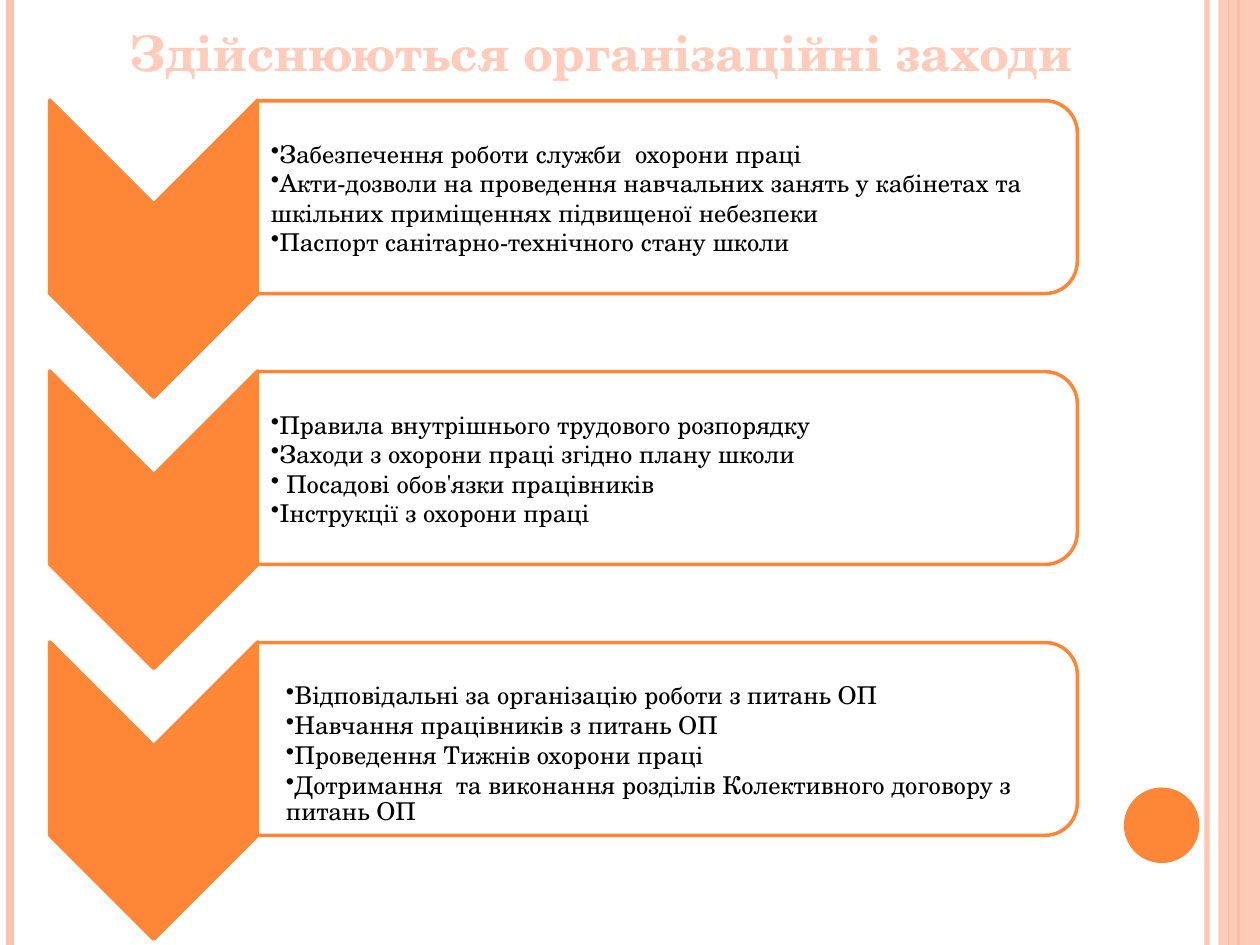
from lxml import etree
from pptx import Presentation
from pptx.dml.color import RGBColor
from pptx.enum.shapes import MSO_CONNECTOR, MSO_SHAPE
from pptx.enum.text import MSO_ANCHOR, PP_ALIGN
from pptx.oxml.ns import qn
from pptx.util import Inches, Pt

STRAIGHT = MSO_CONNECTOR.STRAIGHT
RECTANGLE, OVAL, CHEVRON = MSO_SHAPE.RECTANGLE, MSO_SHAPE.OVAL, MSO_SHAPE.CHEVRON
ROUND_TOP = MSO_SHAPE.ROUND_2_SAME_RECTANGLE
MIDDLE, CENTER = MSO_ANCHOR.MIDDLE, PP_ALIGN.CENTER
FONT = "TeX Gyre Schola"
COLORS = {"orange": "FE8637", "peach": "FEC3AE", "title": "FFCCBB",
          "panel": "FFFFFF", "text": "000000"}

prs = Presentation()
prs.slide_width, prs.slide_height = Inches(10), Inches(7.5)
slide = prs.slides.add_slide(prs.slide_layouts[6])
shapes = slide.shapes
CELL = prs.slide_width / 100


def grid(*cells):
    return [round(cell * CELL) for cell in cells]


def paint(color_format, name, opacity=100):
    color_format.solid()
    color_format.fore_color.rgb = RGBColor.from_string(COLORS[name])
    if opacity < 100:
        color = color_format._xPr.find(qn("a:solidFill"))[0]
        etree.SubElement(color, qn("a:alpha"), val=str(opacity * 1000))


stripes = [(95.8, "peach", 3, 93), (0.8, "peach", 4.5, 100), (98.3, "orange", 1.5, 100),
           (97.5, "orange", 0.75, 100)]
for column, color, weight, opacity in stripes:
    stripe = shapes.add_connector(STRAIGHT, *grid(column, 0, column, 75))
    stripe.line.width = Pt(weight)
    paint(stripe.line.fill, color, opacity)
    etree.SubElement(stripe._element.spPr, qn("a:effectLst"))

ornaments = [(RECTANGLE, (96.7, 0, 3.3, 75), "peach", 87),
             (OVAL, (89.2, 62.5, 6, 6), "orange", 100)]
for kind, cells, color, opacity in ornaments:
    ornament = shapes.add_shape(kind, *grid(*cells))
    ornament.shadow.inherit = False
    paint(ornament.fill, color, opacity)
    ornament.line.fill.background()

ROW_PITCH = 21.5
measures = [
    (["Забезпечення роботи служби  охорони праці",
      "Акти-дозволи на проведення навчальних занять у кабінетах та "
      "шкільних приміщеннях підвищеної небезпеки",
      "Паспорт санітарно-технічного стану школи"], 0, 0, 1, 0),
    (["Правила внутрішнього трудового розпорядку",
      "Заходи з охорони праці згідно плану школи",
      " Посадові обов'язки працівників",
      "Інструкції з охорони праці"], 0, 0, 1, 0),
    (["Відповідальні за організацію роботи з питань ОП",
      "Навчання працівників з питань ОП",
      "Проведення Тижнів охорони праці",
      "Дотримання  та виконання розділів Колективного договору з питань ОП"],
     1.2, 1.2, 0.9, 2),
]
for row, (items, indent, drop, spacing, gap) in enumerate(measures):
    top = row * ROW_PITCH
    for kind, cells, color, opacity in [
            (CHEVRON, (0.4, 11.5 + top, 23.6, 16.5), "orange", 100),
            (ROUND_TOP, (45.3, top - 16.9, 15.3, 65.1), "panel", 90)]:
        block = shapes.add_shape(kind, *grid(*cells))
        block.rotation = 90
        block.shadow.inherit = False
        paint(block.fill, color, opacity)
        paint(block.line.fill, "orange")
        block.line.width = Pt(2)

    panel = shapes.add_textbox(*grid(20.4, 8.8 + top + drop, 64.3, 13.8)).text_frame
    panel.word_wrap = True
    panel.vertical_anchor = MIDDLE
    panel.margin_left, panel.margin_top, panel.margin_right, panel.margin_bottom = grid(
        1.1, 0.1, 0.1, 0.1)
    panel.text = "\n".join(items)
    for item in panel.paragraphs:
        properties = item._p.get_or_add_pPr()
        properties.set("marL", str(grid(indent)[0]))
        properties.set("indent", "0")
        etree.SubElement(properties, qn("a:buChar"), char="•")
        item.line_spacing = spacing
        item.space_after = Pt(gap)
        font = item.runs[0].font
        font.name, font.size = FONT, Pt(14)
        paint(font.fill, "text")

heading = shapes.add_textbox(*grid(2.8, 1.3, 89.8, 5.7)).text_frame
heading.word_wrap = True
heading.text = "Здійснюються організаційні заходи"
heading.paragraphs[0].alignment = CENTER
heading_font = heading.paragraphs[0].runs[0].font
heading_font.name, heading_font.size, heading_font.bold = FONT, Pt(28), True
paint(heading_font.fill, "title")

prs.save("out.pptx")
